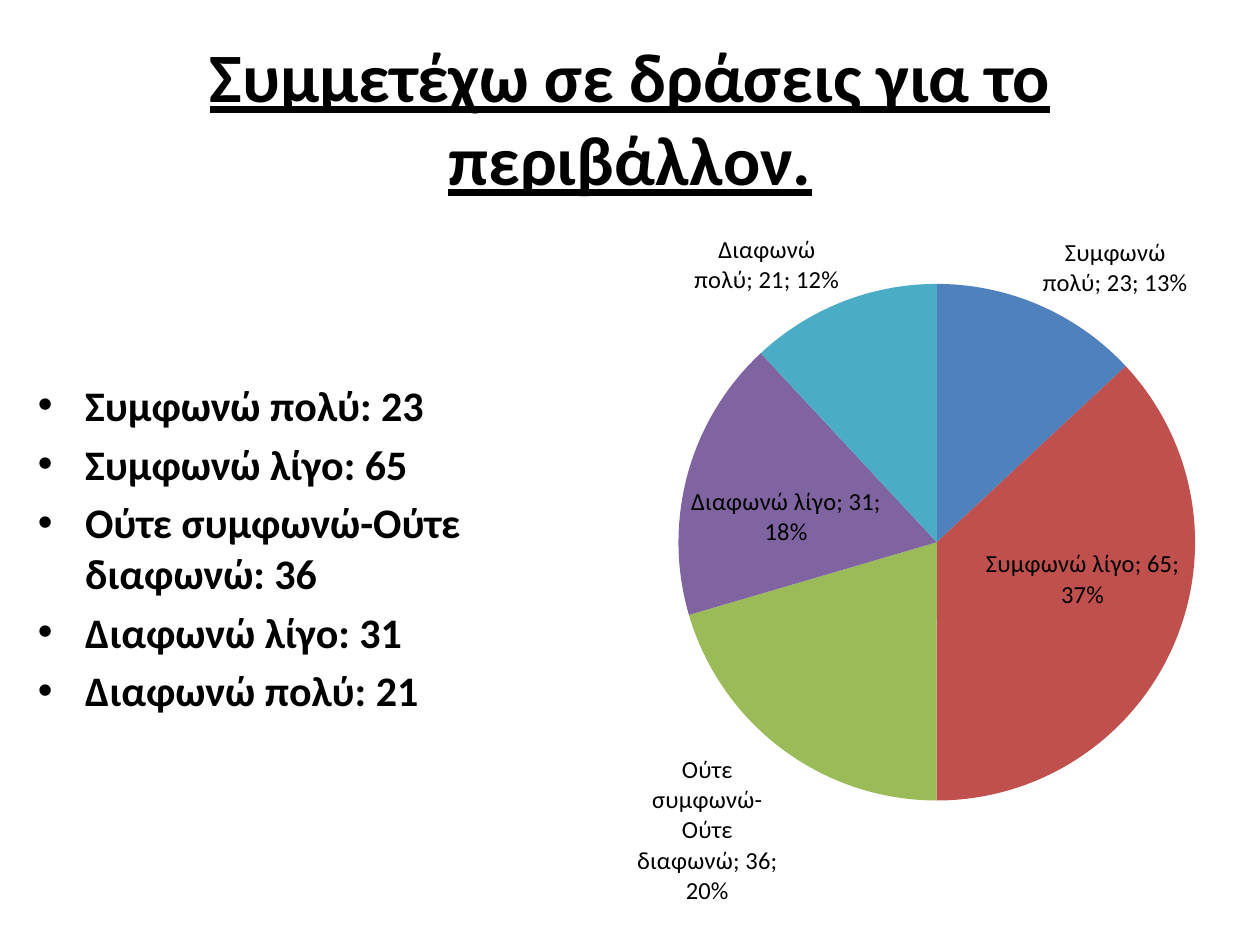
from lxml import etree
from pptx import Presentation
from pptx import util as u
from pptx.chart import data as chart_data
from pptx.dml.color import RGBColor
from pptx.enum import chart as charts, text
from pptx.oxml.ns import qn

FONT = "Calibri"
BLACK = RGBColor(0x00, 0x00, 0x00)
SLICE_COLORS = [
    RGBColor(0x4F, 0x81, 0xBD),
    RGBColor(0xC0, 0x50, 0x4D),
    RGBColor(0x9B, 0xBB, 0x59),
    RGBColor(0x80, 0x64, 0xA2),
    RGBColor(0x4B, 0xAC, 0xC6),
]
ANSWERS = {
    "Συμφωνώ πολύ": 23,
    "Συμφωνώ λίγο": 65,
    "Ούτε συμφωνώ-Ούτε διαφωνώ": 36,
    "Διαφωνώ λίγο": 31,
    "Διαφωνώ πολύ": 21,
}
TITLE_BOX = (0.5, 0.3, 9, 1.25)
LIST_BOX = (0.2, 2.96, 3.94, 3.15)
CHART_BOX = (3.82, 1.47, 6.18, 6.03)
PIE_AREA = {"x": 0.25, "y": 0.13, "w": 0.67, "h": 0.68}


def place(shape, box):
    """Move a shape to a box given in inches."""
    shape.left, shape.top, shape.width, shape.height = map(u.Inches, box)


def style(font, size):
    """Give a font the common face, colour and a size."""
    font.name = FONT
    font.size = u.Pt(size)
    font.color.rgb = BLACK


def add_span(para, words, size):
    """Add a bold run to a paragraph and return it."""
    span = para.add_run()
    span.text = words
    style(span.font, size)
    span.font.bold = True
    return span


def fill_title(title, box):
    """Write the underlined heading."""
    place(title, box)
    frame = title.text_frame
    frame.word_wrap = True
    frame.auto_size = text.MSO_AUTO_SIZE.NONE
    frame.vertical_anchor = text.MSO_ANCHOR.MIDDLE
    para = frame.paragraphs[0]
    para.alignment = text.PP_ALIGN.CENTER
    span = add_span(para, "Συμμετέχω σε δράσεις για το περιβάλλον.", 39.6)
    span.font.underline = True


def fill_list(body, box):
    """List every answer with its count."""
    place(body, box)
    frame = body.text_frame
    frame.word_wrap = True
    frame.auto_size = text.MSO_AUTO_SIZE.NONE
    for index, (answer, count) in enumerate(ANSWERS.items()):
        para = frame.paragraphs[0] if index == 0 else frame.add_paragraph()
        add_span(para, f"{answer}: {count}", 24)


def set_pie_area(chart):
    """Fix the inner plot area as fractions of the chart."""
    plot_area = chart.plots[0]._element.getparent()
    for old in plot_area.findall(qn("c:layout")):
        plot_area.remove(old)
    layout = etree.Element(qn("c:layout"))
    manual = etree.SubElement(layout, qn("c:manualLayout"))
    settings = {"layoutTarget": "inner", "xMode": "edge", "yMode": "edge", **PIE_AREA}
    for name, value in settings.items():
        etree.SubElement(manual, qn(f"c:{name}")).set("val", str(value))
    plot_area.insert(0, layout)


def add_pie(page, box):
    """Draw the answers as a labelled pie."""
    answers = chart_data.CategoryChartData()
    answers.categories = list(ANSWERS)
    answers.add_series("Series 1", list(ANSWERS.values()))
    chart = page.shapes.add_chart(
        charts.XL_CHART_TYPE.PIE, *map(u.Inches, box), answers
    ).chart
    chart.has_title = False
    chart.has_legend = False
    style(chart.font, 10)
    set_pie_area(chart)

    plot = chart.plots[0]
    plot.vary_by_categories = True
    for index, color in enumerate(SLICE_COLORS):
        fill = plot.series[0].points[index].format.fill
        fill.solid()
        fill.fore_color.rgb = color

    plot.has_data_labels = True
    labels = plot.data_labels
    labels.show_category_name = True
    labels.show_value = True
    labels.show_percentage = True
    labels.position = charts.XL_LABEL_POSITION.BEST_FIT
    style(labels.font, 14)
    separator = etree.Element(qn("c:separator"))
    separator.text = "; "
    labels._element.find(qn("c:showBubbleSize")).addnext(separator)


def main():
    """Build and save the deck."""
    deck = Presentation()
    deck.slide_width, deck.slide_height = u.Inches(10), u.Inches(7.5)
    page = deck.slides.add_slide(deck.slide_layouts[1])
    fill_title(page.shapes.title, TITLE_BOX)
    fill_list(page.placeholders[1], LIST_BOX)
    add_pie(page, CHART_BOX)
    deck.save("out.pptx")


if __name__ == "__main__":
    main()
